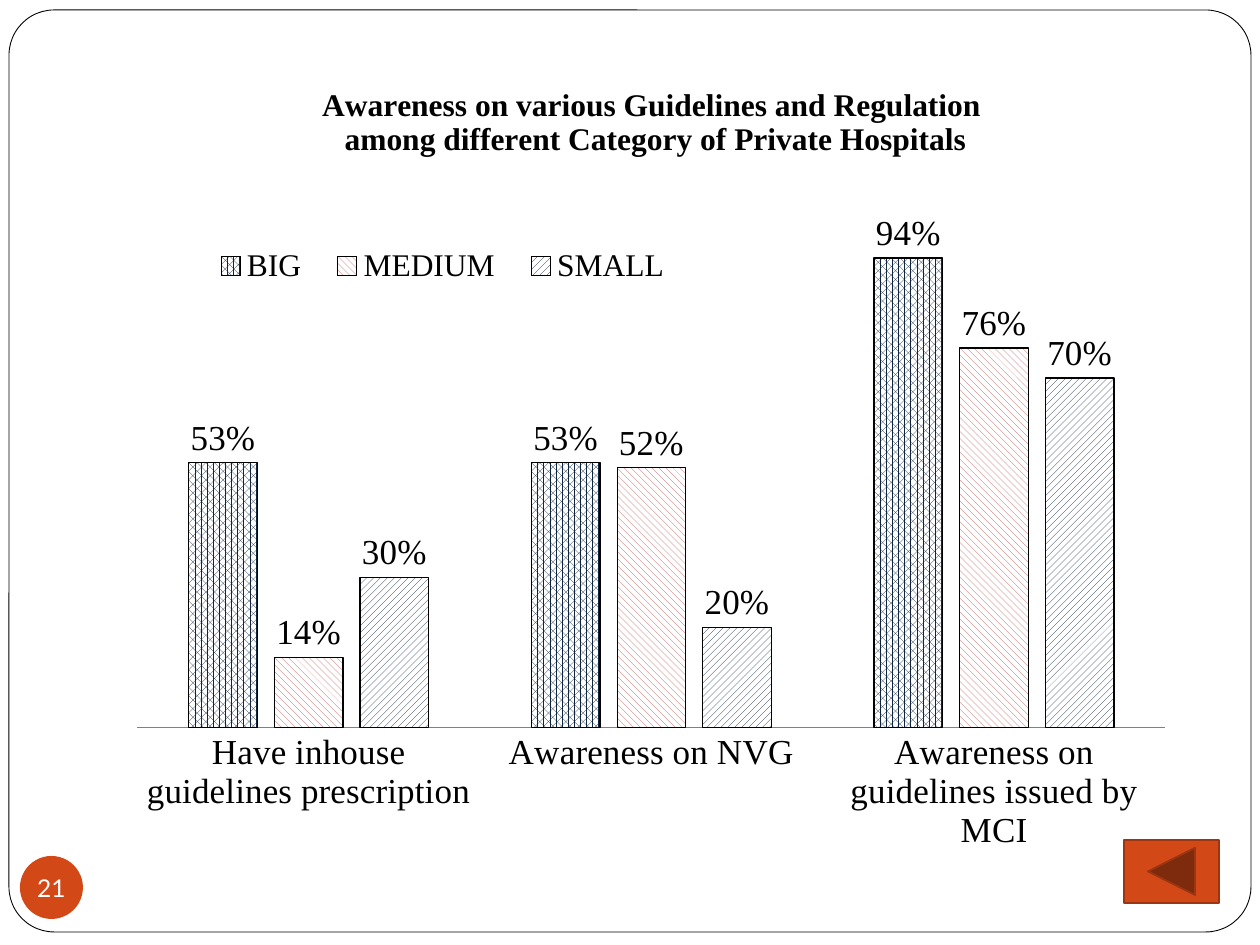
"""Build the slide on guideline awareness among private hospitals."""
from lxml.etree import SubElement
from pptx import Presentation
from pptx.chart.data import CategoryChartData
from pptx.dml.color import RGBColor
from pptx.enum.chart import XL_CHART_TYPE as ChartType, XL_LABEL_POSITION as LabelPos
from pptx.enum.chart import XL_LEGEND_POSITION as LegendPos, XL_TICK_MARK as Tick
from pptx.enum.dml import MSO_PATTERN as Pattern
from pptx.enum.shapes import MSO_SHAPE as Shape
from pptx.enum.text import MSO_ANCHOR as Anchor, PP_ALIGN as Align
from pptx.oxml.ns import qn
from pptx.util import Pt

PX = 7257
SLIDE = (1260, 945)
TITLE = ["Awareness on various Guidelines and Regulation ",
         "among different Category of Private Hospitals"]
CATEGORIES = ["Have inhouse guidelines prescription", "Awareness on NVG",
              "Awareness on guidelines issued by MCI"]
HOSPITALS = [
    ("BIG", (0.53, 0.53, 0.94), Pattern.PERCENT_70, "navy"),
    ("MEDIUM", (0.14, 0.52, 0.76), Pattern.WIDE_DOWNWARD_DIAGONAL, "red"),
    ("SMALL", (0.30, 0.20, 0.70), Pattern.UPWARD_DIAGONAL, "navy"),
]
PAGE = "21"
BOXES = {
    "frame": (9, 10, 1242, 922),
    "page": (20, 856, 63, 63),
    "chart": (116, 53, 1071, 815),
    "back": (1124, 840, 95, 63),
    "title": (318, 82),
    "legend": (195, 248, 495, 36),
    "plot": (137, 228, 1028, 500),
}
THEME = {
    "white": "FFFFFF", "black": "000000", "orange": "D34817", "rust": "9C3511",
    "navy": "0F243E", "red": "C0504D", "grey": "808080",
    "serif": "Times New Roman", "sans": "Lato",
    "base": 10, "page": 14, "heading": 18, "label": 20,
}


def color(name):
    return RGBColor.from_string(THEME[name])


def apply(target, **values):
    for name, value in values.items():
        setattr(target, name, value)


def set_font(font, size, ink="black", face="serif", bold=False):
    apply(font, size=Pt(THEME[size]), name=THEME[face], bold=bold)
    font.color.rgb = color(ink)


def set_line(line, ink, width):
    line.color.rgb = color(ink)
    line.width = Pt(width)


def add_preset(slide, kind, part, fill, ink=None, width=0):
    shape = slide.shapes.add_shape(kind, *(PX * n for n in BOXES[part]))
    shape.shadow.inherit = False
    shape.fill.solid()
    shape.fill.fore_color.rgb = color(fill)
    if ink:
        set_line(shape.line, ink, width)
    else:
        shape.line.fill.background()
    return shape


def place(element, index, part):
    for old in element.findall(qn("c:layout")):
        element.remove(old)
    layout = SubElement(element, qn("c:layout"))
    element.insert(index, layout)
    manual = SubElement(layout, qn("c:manualLayout"))
    left, top, width, height = BOXES["chart"]
    box = BOXES[part]
    values = [(box[0] - left) / width, (box[1] - top) / height]
    values += [n / whole for n, whole in zip(box[2:], (width, height))]
    settings = [("layoutTarget", "inner")] if part == "plot" else []
    settings += [("xMode", "edge"), ("yMode", "edge")]
    settings += [(name, f"{value:.3f}") for name, value in zip("xywh", values)]
    for name, value in settings:
        SubElement(manual, qn(f"c:{name}")).set("val", value)


def style_series(series, pattern, ink):
    fill = series.format.fill
    fill.patterned()
    fill.pattern = pattern
    fill.fore_color.rgb = color(ink)
    fill.back_color.rgb = color("white")
    set_line(series.format.line, "black", 0.75)
    series.invert_if_negative = False
    labels = series.data_labels
    apply(labels, show_value=True, number_format="0%",
          number_format_is_linked=False, position=LabelPos.OUTSIDE_END)
    set_font(labels.font, "label")


def add_awareness_chart(slide):
    data = CategoryChartData(number_format="0%")
    data.categories = CATEGORIES
    for name, shares, *_ in HOSPITALS:
        data.add_series(name, shares)
    box = (PX * n for n in BOXES["chart"])
    chart = slide.shapes.add_chart(ChartType.COLUMN_CLUSTERED, *box, data).chart
    apply(chart, has_title=True, has_legend=True)
    set_font(chart.font, "base")

    heading = chart.chart_title.text_frame
    for index, text in enumerate(TITLE):
        line = heading.add_paragraph() if index else heading.paragraphs[0]
        line.alignment = Align.CENTER
        run = line.add_run()
        run.text = text
        set_font(run.font, "heading", bold=True)

    apply(chart.legend, position=LegendPos.TOP, include_in_layout=False)
    set_font(chart.legend.font, "heading")

    apply(chart.value_axis, visible=False, has_major_gridlines=False,
          minimum_scale=0, maximum_scale=1)
    axis = chart.category_axis
    apply(axis, major_tick_mark=Tick.NONE, minor_tick_mark=Tick.NONE)
    set_font(axis.tick_labels.font, "label")
    set_line(axis.format.line, "grey", 0.75)

    columns = chart.plots[0]
    apply(columns, gap_width=150, overlap=-25, vary_by_categories=False)
    for series, (_, _, pattern, ink) in zip(columns.series, HOSPITALS):
        style_series(series, pattern, ink)

    place(chart.chart_title._element, 1, "title")
    place(chart.legend._element, 1, "legend")
    place(columns._element.getparent(), 0, "plot")


def main():
    deck = Presentation()
    apply(deck, slide_width=PX * SLIDE[0], slide_height=PX * SLIDE[1])
    slide = deck.slides.add_slide(deck.slide_layouts[6])

    frame = add_preset(slide, Shape.ROUNDED_RECTANGLE, "frame", "white", "black", 0.5)
    frame.adjustments[0] = 0.049

    badge = add_preset(slide, Shape.OVAL, "page", "orange").text_frame
    apply(badge, margin_left=0, margin_right=0, margin_top=0, margin_bottom=0,
          word_wrap=False, vertical_anchor=Anchor.MIDDLE)
    number = badge.paragraphs[0]
    apply(number, text=PAGE, alignment=Align.CENTER)
    set_font(number.runs[0].font, "page", "white", "sans")

    add_awareness_chart(slide)
    add_preset(slide, Shape.ACTION_BUTTON_BACK_OR_PREVIOUS, "back", "orange", "rust", 1)
    deck.save("out.pptx")


if __name__ == "__main__":
    main()
